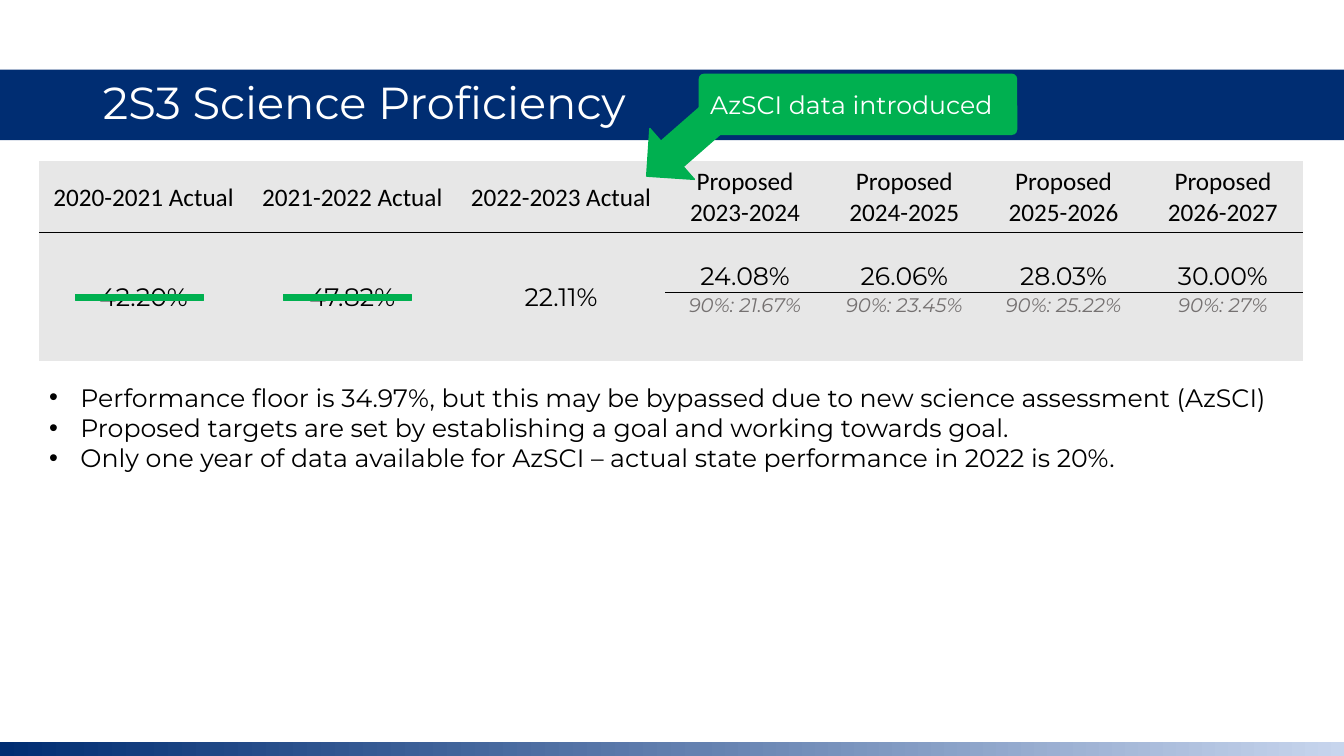
from copy import deepcopy

from pptx import Presentation
from pptx.dml.color import RGBColor
from pptx.enum.shapes import MSO_SHAPE as SHAPE
from pptx.enum.text import MSO_ANCHOR as ANCHOR, MSO_AUTO_SIZE as FIT, PP_ALIGN as ALIGN
from pptx.oxml import parse_xml
from pptx.oxml.ns import nsdecls, qn
from pptx.util import Inches, Pt

COLORS = {"navy": "002D72", "blue": "6481B0", "sky": "C7D5ED", "green": "00B050",
          "cell": "E7E7E7", "muted": "757171", "black": "000000", "white": "FFFFFF"}
NO_STYLE = "{2D5ABB26-0587-4C30-8999-92F81FD0307C}"

HEADERS = [f"{y}-{y + 1} Actual" for y in range(2020, 2023)]
HEADERS += [f"Proposed\n{y}-{y + 1}" for y in range(2023, 2027)]
RATES = ["42.20%", "47.82%", "22.11%", "24.08%", "26.06%", "28.03%", "30.00%"]
FLOORS = ["21.67%", "23.45%", "25.22%", "27%"]
NOTES = [
    "Performance floor is 34.97%, but this may be bypassed due to new science assessment (AzSCI)",
    "Proposed targets are set by establishing a goal and working towards goal.",
    "Only one year of data available for AzSCI – actual state performance in 2022 is 20%.",
]


def rgb(name):
    return RGBColor.from_string(COLORS[name])


class SlideBuilder:
    """Draws styled elements on the current slide."""

    def __init__(self, slide, font="Montserrat", size=18):
        self.s, self.font, self.size = slide, font, size

    def add_text(self, p, text, color="black", size=None, font=None, italic=None, align=ALIGN.LEFT):
        p.alignment = align
        for i, line in enumerate(text.split("\n")):
            if i:
                p.add_line_break()
            r = p.add_run()
            r.text = line
            r.font.name, r.font.size = font or self.font, Pt(size or self.size)
            r.font.color.rgb, r.font.italic = rgb(color), italic

    def shape(self, kind, x, y, w, h, fill, line=None):
        sp = self.s.shapes.add_shape(kind, Inches(x), Inches(y), Inches(w), Inches(h))
        sp.shadow.inherit = False
        sp.fill.solid()
        sp.fill.fore_color.rgb = rgb(fill)
        if line:
            sp.line.color.rgb, sp.line.width = rgb(line), Pt(1)
        else:
            sp.line.fill.background()
        return sp

    def gradient_bar(self, x, y, w, h, stops):
        sp = self.shape(SHAPE.RECTANGLE, x, y, w, h, stops[0][1])
        sp.fill.gradient()
        sp.fill.gradient_angle = 0
        gs_list = sp.element.spPr.find(".//" + qn("a:gsLst"))
        while len(gs_list) < len(stops):
            gs_list.append(deepcopy(gs_list[0]))
        for gs, (position, color) in zip(sp.fill.gradient_stops, stops):
            gs.position, gs.color.rgb = position, rgb(color)

    def title(self, text, x, y, w, h):
        sp = self.s.shapes.title
        self.s.shapes.element.append(sp.element)
        sp.left, sp.top, sp.width, sp.height = map(Inches, (x, y, w, h))
        tf = sp.text_frame
        tf.auto_size, tf.vertical_anchor, tf.word_wrap = FIT.NONE, ANCHOR.MIDDLE, True
        tf.paragraphs[0].line_spacing = 0.9
        self.add_text(tf.paragraphs[0], text, "white", size=32)

    def bullets(self, items, x, y, w, h):
        tf = self.s.shapes.add_textbox(Inches(x), Inches(y), Inches(w), Inches(h)).text_frame
        tf.word_wrap, tf.auto_size = True, FIT.SHAPE_TO_FIT_TEXT
        for i, item in enumerate(items):
            p = tf.add_paragraph() if i else tf.paragraphs[0]
            pPr = p._p.get_or_add_pPr()
            pPr.set("marL", str(Inches(0.31)))
            pPr.set("indent", str(-Inches(0.31)))
            pPr.append(parse_xml(f'<a:buFont {nsdecls("a")} typeface="Arial"/>'))
            pPr.append(parse_xml(f'<a:buChar {nsdecls("a")} char="•"/>'))
            self.add_text(p, item)

    def table(self, x, y, widths, heights):
        frame = self.s.shapes.add_table(len(heights), len(widths), Inches(x), Inches(y),
                                        Inches(sum(widths)), Inches(sum(heights)))
        table = frame.table
        table.first_row = table.horz_banding = False
        table._tbl.tblPr.find(qn("a:tableStyleId")).text = NO_STYLE
        for column, width in zip(table.columns, widths):
            column.width = Inches(width)
        for row, height in zip(table.rows, heights):
            row.height = Inches(height)
        return table

    def cell(self, cell, text, anchor=ANCHOR.MIDDLE, edge=None, **style):
        cell.fill.solid()
        cell.fill.fore_color.rgb = rgb("cell")
        cell.margin_left = cell.margin_right = cell.margin_top = Inches(0.01)
        cell.margin_bottom = 0
        cell.vertical_anchor = anchor
        if edge:
            cell._tc.get_or_add_tcPr().insert(0, parse_xml(
                f'<a:{edge} {nsdecls("a")} w="{Pt(1)}"><a:solidFill>'
                f'<a:srgbClr val="{COLORS["black"]}"/></a:solidFill></a:{edge}>'))
        self.add_text(cell.text_frame.paragraphs[0], text, align=ALIGN.CENTER, **style)

    def callout(self, text, x, y, w, h):
        sp = self.shape(SHAPE.ROUNDED_RECTANGLE, x, y, w, h, "green")
        sp.adjustments[0] = 0.09
        tf = sp.text_frame
        tf.word_wrap, tf.vertical_anchor = True, ANCHOR.MIDDLE
        self.add_text(tf.paragraphs[0], text, "white")


def main():
    prs = Presentation()
    prs.slide_width, prs.slide_height = Inches(13.33), Inches(7.5)
    b = SlideBuilder(prs.slides.add_slide(prs.slide_layouts[5]))

    b.shape(SHAPE.RECTANGLE, 0, 0.69, 13.33, 0.7, "navy")
    b.gradient_bar(0, 7.36, 13.33, 0.14, [(0, "navy"), (0.52, "blue"), (1, "sky")])
    b.title("2S3 Science Proficiency", 0.92, 0.69, 11.5, 0.7)

    actuals = len(RATES) - len(FLOORS)
    table = b.table(0.39, 1.6, [2.07] * actuals + [1.58] * len(FLOORS), [0.71, 0.59, 0.68])
    for c, (header, rate) in enumerate(zip(HEADERS, RATES)):
        b.cell(table.cell(0, c), header, edge="lnB", font="Calibri")
        if c < actuals:
            table.cell(1, c).merge(table.cell(2, c))
            b.cell(table.cell(1, c), rate, edge="lnT")
        else:
            b.cell(table.cell(1, c), rate, ANCHOR.BOTTOM, edge="lnT")
            b.cell(table.cell(2, c), f"90%: {FLOORS[c - actuals]}", ANCHOR.TOP,
                   color="muted", size=14, italic=True)

    b.bullets(NOTES, 0.39, 3.74, 12.46, 1.01)
    b.shape(SHAPE.LEFT_ARROW, 6.3, 1.11, 0.92, 0.67, "green", "green").rotation = 318.8
    b.callout("AzSCI data introduced", 6.93, 0.73, 3.16, 0.61)
    for x in (2.81, 0.75):
        b.shape(SHAPE.RECTANGLE, x, 2.92, 1.27, 0.06, "green", "green")
    prs.save("out.pptx")


if __name__ == "__main__":
    main()
